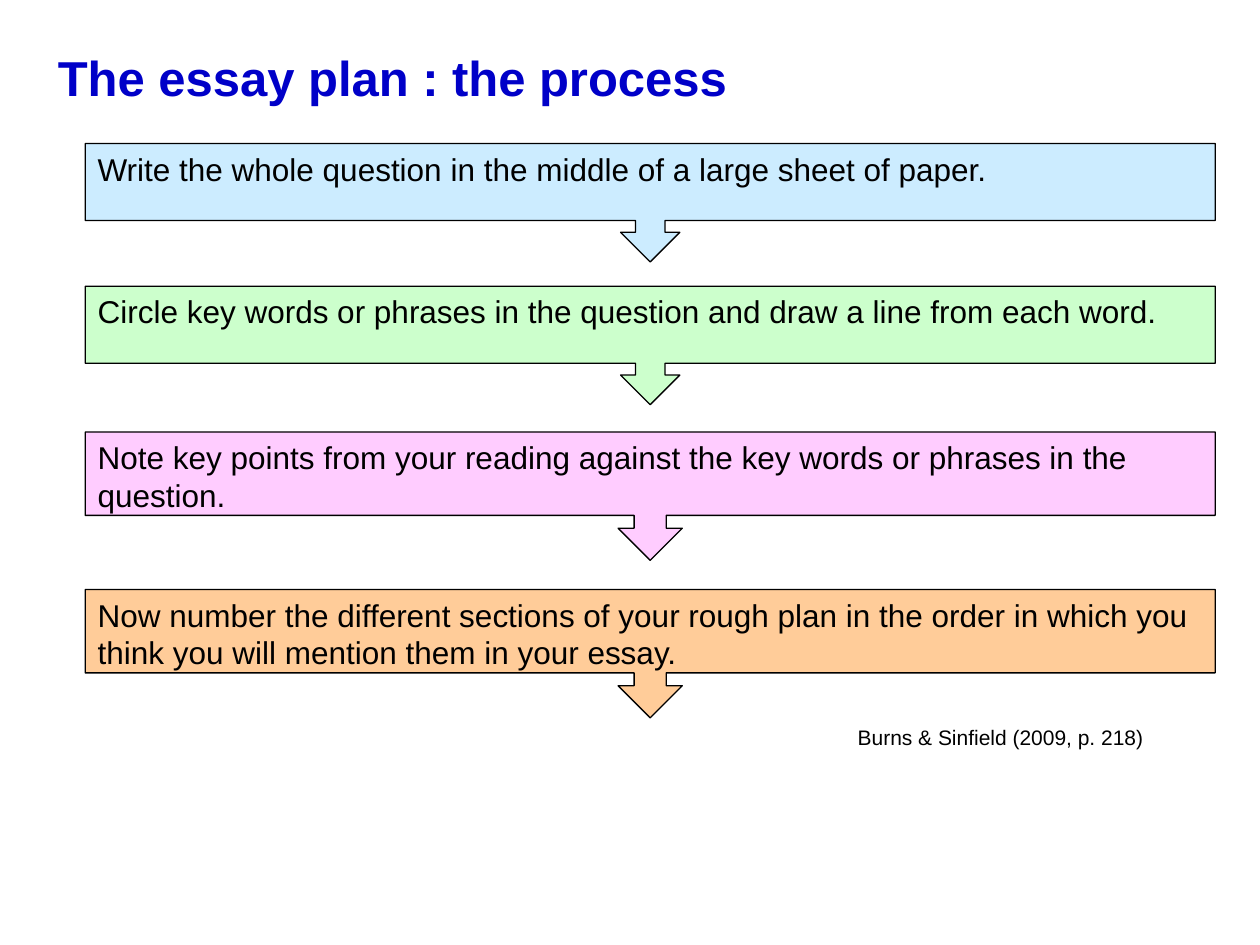
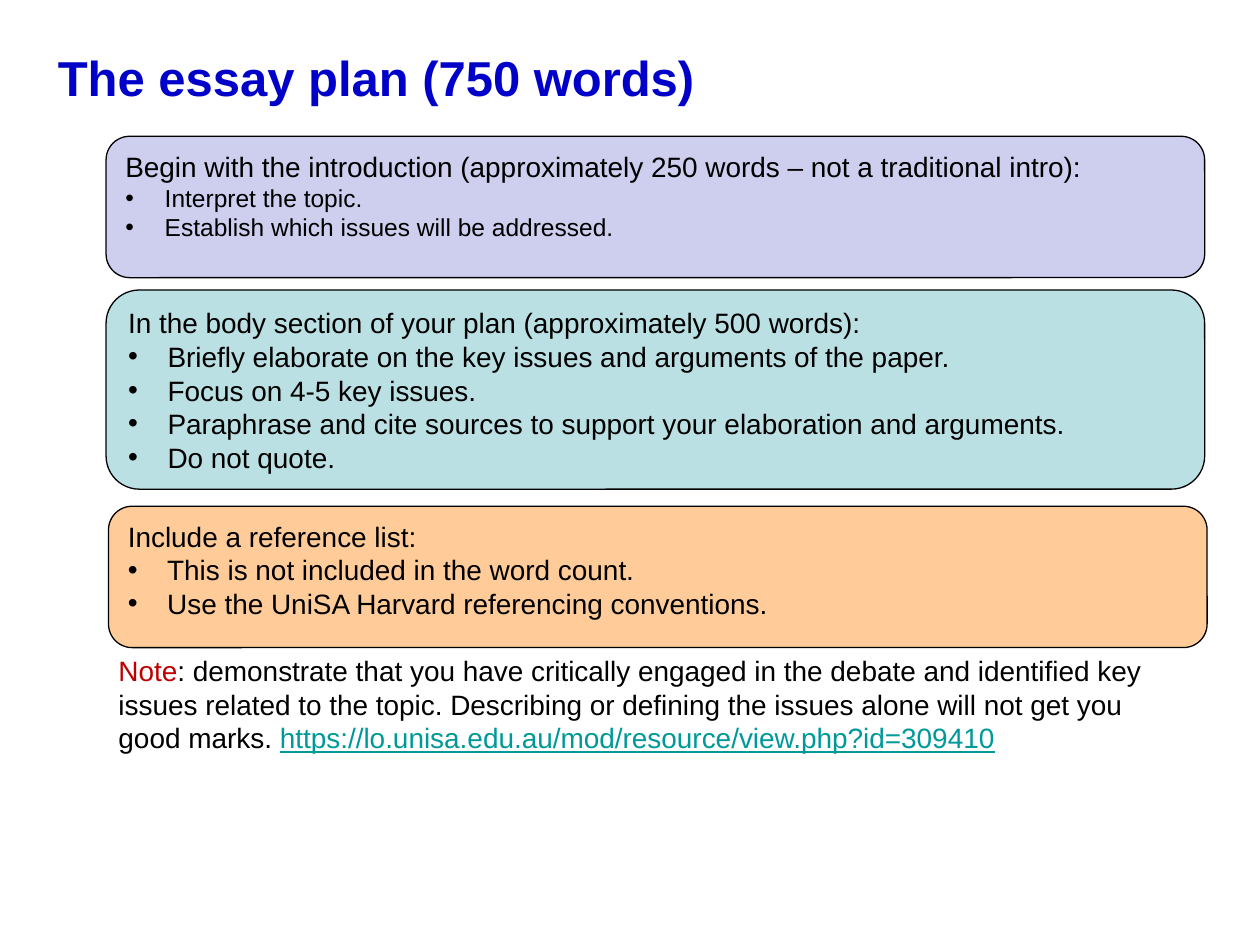
"""Build two slides on planning an essay: the process and the word budget."""
from lxml import etree
from pptx import Presentation
from pptx.dml.color import RGBColor
from pptx.enum.shapes import MSO_SHAPE
from pptx.enum.text import MSO_ANCHOR, PP_ALIGN
from pptx.oxml.ns import qn
from pptx.util import Pt

CALLOUT = MSO_SHAPE.DOWN_ARROW_CALLOUT
ROUNDED = MSO_SHAPE.ROUNDED_RECTANGLE
TOP = MSO_ANCHOR.TOP
LEFT = PP_ALIGN.LEFT

FONT = "Arial"
COLORS = {
    "title": "0000C8", "ink": "000000", "note": "C00000", "link": "009999",
    "sky": "CCECFF", "mint": "CCFFCC", "pink": "FFCCFF", "peach": "FFCC99",
    "lavender": "CECEEF", "teal": "BBE0E3",
}

PROCESS_TITLE = "The essay plan : the process"
STEPS = [
    ("sky", 82, 67.7, "Write the whole question in the middle of a large sheet of paper."),
    ("mint", 163.6, 67.7, "Circle key words or phrases in the question and draw a line from each word."),
    ("pink", 246.8, 73.4, "Note key points from your reading against the key words or phrases in the question."),
    ("peach", 336.8, 73.4, "Now number the different sections of your rough plan in the order in which you "
                           "think you will mention them in your essay."),
]
CITATION = "Burns & Sinfield (2009, p. 218)"

PLAN_TITLE = "The essay plan (750 words)"
SECTIONS = [
    ("lavender", 60.6, 77.9, 80.8, 14,
     "Begin with the introduction (approximately 250 words – not a traditional intro):",
     ["Interpret the topic.", "Establish which issues will be addressed."]),
    ("teal", 60.6, 165.7, 113.8, 16,
     "In the body section of your plan (approximately 500 words):",
     ["Briefly elaborate on the key issues and arguments of the paper.",
      "Focus on 4-5 key issues.",
      "Paraphrase and cite sources to support your elaboration and arguments.",
      "Do not quote."]),
    ("peach", 62, 289.3, 80.8, 16,
     "Include a reference list:",
     ["This is not included in the word count.",
      "Use the UniSA Harvard referencing conventions."]),
]
NOTE = [
    ("Note", "note"),
    (": demonstrate that you have critically engaged in the debate and identified key issues "
     "related to the topic. Describing or defining the issues alone will not get you good marks. ", "ink"),
    ("https://lo.unisa.edu.au/mod/resource/view.php?id=309410", "link"),
]

STEP_LEFT, STEP_WIDTH = 48.7, 645.7
SECTION_WIDTH = 627.8
BULLET_INDENT = 22.5


def color(name):
    return RGBColor.from_string(COLORS[name])


def style(font, size, ink="ink", bold=False):
    font.name, font.size, font.bold = FONT, Pt(size), bold
    font.color.rgb = color(ink)


def prepare(frame):
    frame.word_wrap = True
    frame.vertical_anchor = TOP
    return frame


def add_text(slide, left, top, width, height):
    return prepare(slide.shapes.add_textbox(Pt(left), Pt(top), Pt(width), Pt(height)).text_frame)


def add_panel(slide, kind, fill, left, top, width, height):
    panel = slide.shapes.add_shape(kind, Pt(left), Pt(top), Pt(width), Pt(height))
    panel.shadow.inherit = False
    panel.fill.solid()
    panel.fill.fore_color.rgb = color(fill)
    panel.line.color.rgb = color("ink")
    panel.line.width = Pt(0.75)
    return prepare(panel.text_frame)


def write(paragraph, text, size):
    paragraph.text = text
    paragraph.alignment = LEFT
    style(paragraph.runs[0].font, size)


def add_bullet(paragraph):
    properties = paragraph._p.get_or_add_pPr()
    properties.set("marL", str(Pt(BULLET_INDENT)))
    properties.set("indent", str(-Pt(BULLET_INDENT)))
    etree.SubElement(properties, qn("a:buFont")).set("typeface", FONT)
    etree.SubElement(properties, qn("a:buChar")).set("char", "•")


def add_titled_slide(deck, title):
    slide = deck.slides.add_slide(deck.slide_layouts[6])
    heading = add_text(slide, 26, 21, 677.5, 52.5)
    heading.margin_top = Pt(6.4)
    heading.text = title
    style(heading.paragraphs[0].runs[0].font, 28, "title", True)
    return slide


def build_process(deck):
    slide = add_titled_slide(deck, PROCESS_TITLE)
    for fill, top, height, step in STEPS:
        frame = add_panel(slide, CALLOUT, fill, STEP_LEFT, top, STEP_WIDTH, height)
        write(frame.paragraphs[0], step, 18)
    write(add_text(slide, 483, 410.4, 224.6, 21.8).paragraphs[0], CITATION, 12)


def build_plan(deck):
    slide = add_titled_slide(deck, PLAN_TITLE)
    for fill, left, top, height, point_size, lead, points in SECTIONS:
        frame = add_panel(slide, ROUNDED, fill, left, top, SECTION_WIDTH, height)
        write(frame.paragraphs[0], lead, 16)
        for point in points:
            paragraph = frame.add_paragraph()
            add_bullet(paragraph)
            write(paragraph, point, point_size)
    advice = add_text(slide, 60.6, 370, SECTION_WIDTH, 65.5).paragraphs[0]
    for words, ink in NOTE:
        run = advice.add_run()
        run.text = words
        style(run.font, 16, ink)
        run.font.underline = ink == "link"


def main():
    deck = Presentation()
    deck.slide_width, deck.slide_height = Pt(720), Pt(540)
    build_process(deck)
    build_plan(deck)
    deck.save("out.pptx")


if __name__ == "__main__":
    main()
